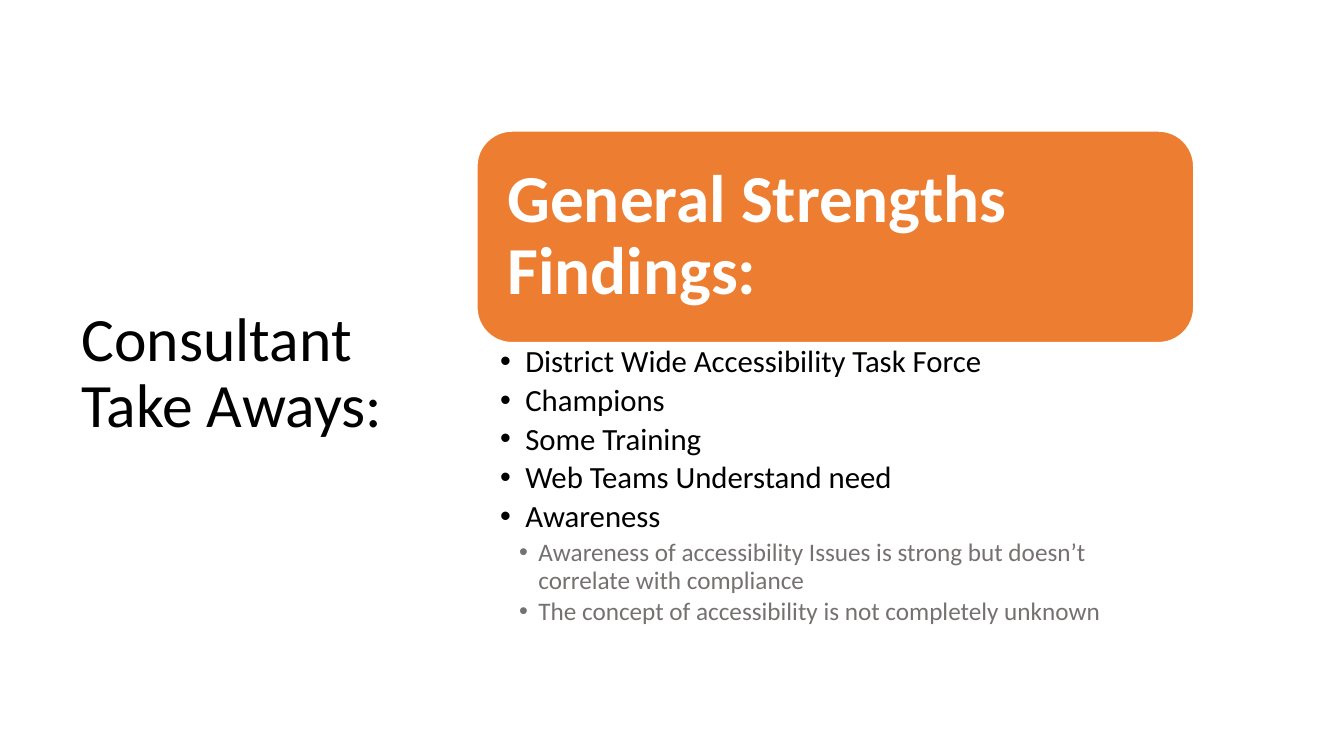
from dataclasses import dataclass

from lxml.etree import SubElement
from pptx import Presentation
from pptx.dml.color import RGBColor
from pptx.enum.shapes import MSO_SHAPE
from pptx.enum.text import MSO_ANCHOR, MSO_AUTO_SIZE, PP_ALIGN
from pptx.oxml.ns import qn
from pptx.util import Inches, Pt

FONT = "Calibri"
BLACK, WHITE, ORANGE, GRAY = "000000", "FFFFFF", "ED7D31", "767171"


@dataclass(frozen=True)
class BulletStyle:
    level: int
    size: int
    color: str
    margin: float
    hanging: float
    space_after: int


@dataclass(frozen=True)
class Finding:
    text: str
    style: BulletStyle


MAIN = BulletStyle(0, 22, BLACK, 0.25, 0.25, 4)
DETAIL = BulletStyle(1, 18, GRAY, 0.38, 0.19, 3)

FINDINGS = [
    Finding("District Wide Accessibility Task Force", MAIN),
    Finding("Champions", MAIN),
    Finding("Some Training", MAIN),
    Finding("Web Teams Understand need", MAIN),
    Finding("Awareness", MAIN),
    Finding("Awareness of accessibility Issues is strong but doesn’t "
            "correlate with compliance", DETAIL),
    Finding("The concept of accessibility is not completely unknown", DETAIL),
]


def rgb(color: str) -> RGBColor:
    return RGBColor.from_string(color)


def place(shape, left: float, top: float, width: float, height: float) -> None:
    shape.left, shape.top = Inches(left), Inches(top)
    shape.width, shape.height = Inches(width), Inches(height)


def set_frame(frame, anchor: MSO_ANCHOR, left: float, top: float,
              right: float, bottom: float) -> None:
    """Set wrapping, anchor and insets of a text frame."""
    frame.word_wrap = True
    frame.auto_size = MSO_AUTO_SIZE.NONE
    frame.vertical_anchor = anchor
    frame.margin_left, frame.margin_top = Inches(left), Inches(top)
    frame.margin_right, frame.margin_bottom = Inches(right), Inches(bottom)


def write(para, text: str, size: int, color: str, bold: bool = False,
          space_after: int = 0) -> None:
    para.alignment = PP_ALIGN.LEFT
    para.line_spacing = 0.9
    para.space_before = Pt(0)
    para.space_after = Pt(space_after)
    span = para.add_run()
    span.text = text
    span.font.name = FONT
    span.font.size = Pt(size)
    span.font.bold = bold
    span.font.color.rgb = rgb(color)


def add_bullet(para, style: BulletStyle) -> None:
    properties = para._p.get_or_add_pPr()
    properties.set("marL", str(Inches(style.margin)))
    properties.set("indent", str(-Inches(style.hanging)))
    SubElement(properties, qn("a:buFont"), typeface="Arial")
    SubElement(properties, qn("a:buChar"), char="•")


def add_title(slide) -> None:
    title = slide.shapes.title
    place(title, 0.71, 1.16, 3.83, 5.11)
    set_frame(title.text_frame, MSO_ANCHOR.MIDDLE, 0.1, 0.05, 0.1, 0.05)
    write(title.text_frame.paragraphs[0], "Consultant Take Aways:", 44, BLACK)


def add_heading(slide) -> None:
    box = slide.shapes.add_shape(
        MSO_SHAPE.ROUNDED_RECTANGLE,
        Inches(4.73), Inches(1.3), Inches(7.11), Inches(2.1))
    box.shadow.inherit = False
    box.fill.solid()
    box.fill.fore_color.rgb = rgb(ORANGE)
    box.line.color.rgb = rgb(WHITE)
    box.line.width = Pt(1)
    set_frame(box.text_frame, MSO_ANCHOR.MIDDLE, 0.2, 0.2, 0.2, 0.2)
    write(box.text_frame.paragraphs[0], "General Strengths Findings:",
          48, WHITE, bold=True)


def add_findings(slide) -> None:
    body = slide.placeholders[1]
    place(body, 4.73, 3.4, 7.11, 2.99)
    frame = body.text_frame
    set_frame(frame, MSO_ANCHOR.TOP, 0.23, 0.03, 0.14, 0.03)
    for index, finding in enumerate(FINDINGS):
        para = frame.add_paragraph() if index else frame.paragraphs[0]
        style = finding.style
        para.level = style.level
        write(para, finding.text, style.size, style.color,
              space_after=style.space_after)
        add_bullet(para, style)


def main() -> None:
    deck = Presentation()
    deck.slide_width, deck.slide_height = Inches(13.33), Inches(7.5)
    slide = deck.slides.add_slide(deck.slide_layouts[1])
    add_title(slide)
    add_heading(slide)
    add_findings(slide)
    deck.save("out.pptx")


if __name__ == "__main__":
    main()
